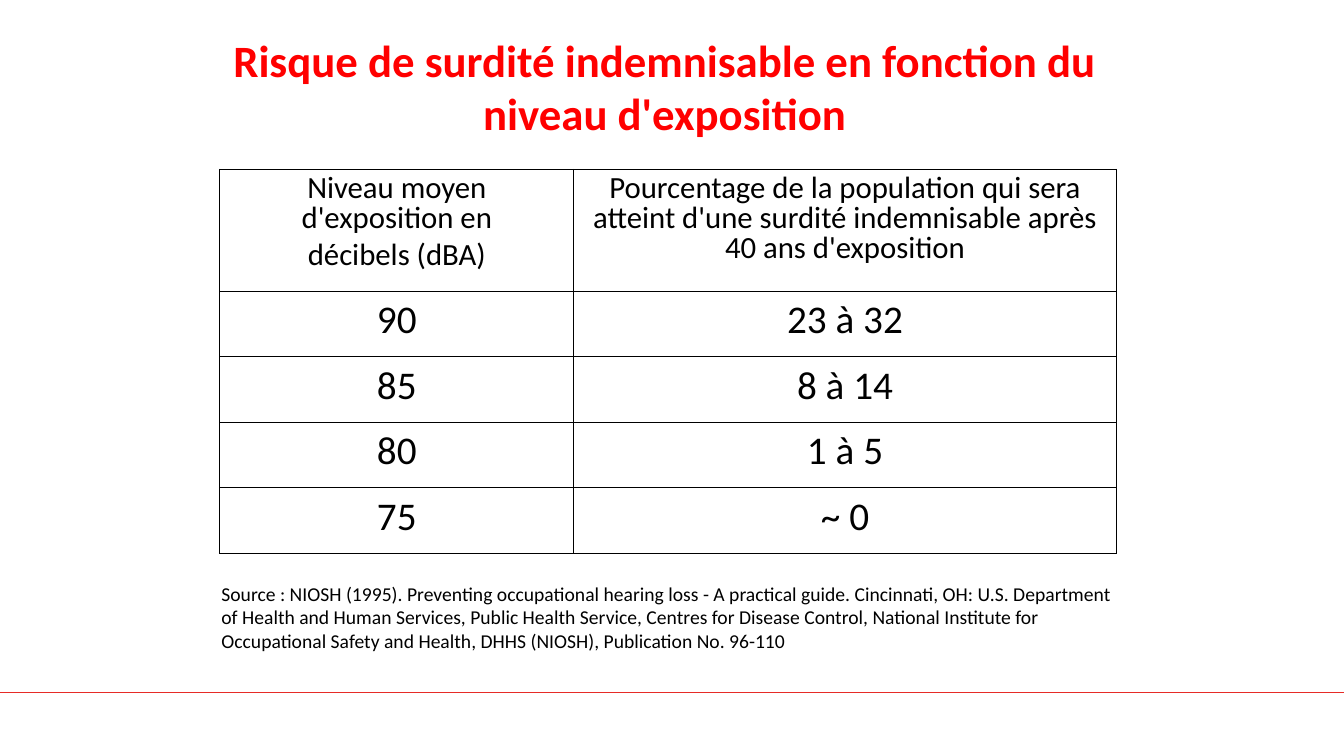
from dataclasses import dataclass
from typing import Optional

import pptx
import pptx.dml.color
import pptx.enum.shapes
import pptx.enum.text
import pptx.oxml
import pptx.oxml.ns
import pptx.util
from pptx.util import Cm

COLORS = {"text": "000000", "title": "FF0000", "rule": "E62B27", "paper": "FFFFFF"}
FONT = "Calibri"
CENTER = pptx.enum.text.PP_ALIGN.CENTER
LEFT = pptx.enum.text.PP_ALIGN.LEFT


@dataclass
class TextStyle:
    size: float
    color: str = "text"
    bold: bool = False
    align: pptx.enum.text.PP_ALIGN = CENTER
    line_spacing: Optional[float] = None
    gap: float = 0


@dataclass
class Caption:
    left: float
    top: float
    width: float
    height: float
    text: str
    style: TextStyle


HEADER = TextStyle(22, line_spacing=0.8, gap=5)
VALUE = TextStyle(28)

# Table content: each cell is a list of paragraphs
HEADINGS = [
    ["Niveau moyen d'exposition en", "décibels (dBA)"],
    ["Pourcentage de la population qui sera atteint d'une surdité "
     "indemnisable après 40 ans d'exposition"],
]
RISKS = [("90", "23 à 32"), ("85", "8 à 14"), ("80", "1 à 5"), ("75", "~ 0")]
COLUMN_WIDTHS = [8.92, 13.67]
HEADER_HEIGHT, VALUE_HEIGHT = 3.07, 1.65

CAPTIONS = [
    Caption(5.33, 14.53, 23.24, 2.06,
            "Source : NIOSH (1995). Preventing occupational hearing loss - "
            "A practical guide. Cincinnati, OH: U.S. Department of Health and "
            "Human Services, Public Health Service, Centres for Disease Control, "
            "National Institute for Occupational Safety and Health, DHHS (NIOSH), "
            "Publication No. 96-110",
            TextStyle(14, align=LEFT)),
    Caption(4.93, 0.69, 23.65, 3.0,
            "Risque de surdité indemnisable en fonction du niveau d'exposition",
            TextStyle(32, "title", bold=True)),
]


def rgb(name: str) -> pptx.dml.color.RGBColor:
    return pptx.dml.color.RGBColor.from_string(COLORS[name])


def write(frame, lines: list[str], style: TextStyle) -> None:
    frame.word_wrap = True
    for index, line in enumerate(lines):
        para = frame.add_paragraph() if index else frame.paragraphs[0]
        para.alignment = style.align
        if style.line_spacing:
            para.line_spacing = style.line_spacing
        if index:
            para.space_before = pptx.util.Pt(style.gap)
        span = para.add_run()
        span.text = line
        span.font.name = FONT
        span.font.size = pptx.util.Pt(style.size)
        span.font.bold = style.bold
        span.font.color.rgb = rgb(style.color)


def add_caption(page, caption: Caption) -> None:
    box = page.shapes.add_textbox(Cm(caption.left), Cm(caption.top),
                                  Cm(caption.width), Cm(caption.height))
    write(box.text_frame, [caption.text], caption.style)


def add_borders(cell) -> None:
    properties = cell._tc.get_or_add_tcPr()
    for side in ("lnL", "lnR", "lnT", "lnB"):
        properties.append(pptx.oxml.parse_xml(
            f'<a:{side} {pptx.oxml.ns.nsdecls("a")} w="12700"><a:solidFill>'
            f'<a:srgbClr val="{COLORS["text"]}"/></a:solidFill></a:{side}>'))


def add_risk_table(page) -> None:
    rows = [HEADINGS] + [[[text] for text in risk] for risk in RISKS]
    heights = [HEADER_HEIGHT] + [VALUE_HEIGHT] * len(RISKS)
    table = page.shapes.add_table(
        len(rows), len(COLUMN_WIDTHS), Cm(5.54), Cm(4.27),
        Cm(sum(COLUMN_WIDTHS)), Cm(sum(heights))).table
    table.first_row = table.horz_banding = False
    for column, width in zip(table.columns, COLUMN_WIDTHS):
        column.width = Cm(width)
    for r, (row, height) in enumerate(zip(rows, heights)):
        table.rows[r].height = Cm(height)
        for c, lines in enumerate(row):
            cell = table.cell(r, c)
            add_borders(cell)
            cell.fill.solid()
            cell.fill.fore_color.rgb = rgb("paper")
            write(cell.text_frame, lines, VALUE if r else HEADER)


def add_footer_rule(page, width: int) -> None:
    rule = page.shapes.add_connector(
        pptx.enum.shapes.MSO_CONNECTOR.STRAIGHT, 0, Cm(17.43), width, Cm(17.43))
    rule.line.color.rgb = rgb("rule")
    rule.line.width = pptx.util.Pt(0.25)
    rule._element.spPr.append(pptx.oxml.parse_xml(
        f'<a:effectLst {pptx.oxml.ns.nsdecls("a")}/>'))


def main() -> None:
    deck = pptx.Presentation()
    deck.slide_width, deck.slide_height = Cm(33.87), Cm(19.05)
    page = deck.slides.add_slide(deck.slide_layouts[6])

    # Footer line, table, then source and title
    add_footer_rule(page, deck.slide_width)
    add_risk_table(page)
    for caption in CAPTIONS:
        add_caption(page, caption)

    deck.save("out.pptx")


if __name__ == "__main__":
    main()
